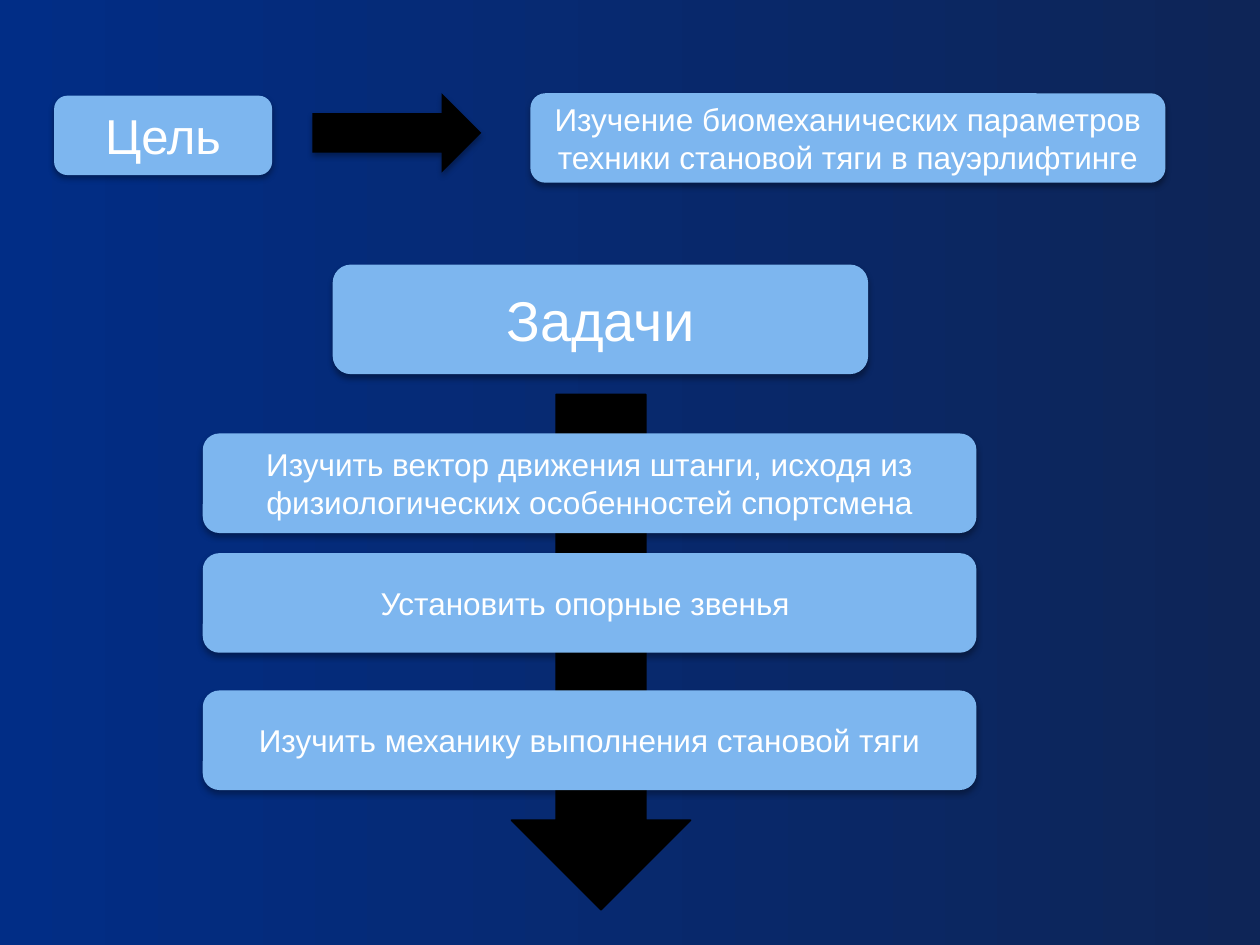
"""Build a slide that leads from the goal of a study to its three tasks."""
from lxml.etree import fromstring
from pptx import Presentation
from pptx.dml.color import RGBColor as Rgb
from pptx.enum.shapes import MSO_SHAPE as Geo
from pptx.enum.text import MSO_ANCHOR as Anchor, PP_ALIGN as Align
from pptx.oxml.ns import qn
from pptx.util import Inches, Pt

THEME = {
    "font": "Arial", "text": "FFFFFF", "box": "7DB6EF", "arrow": "000000",
    "back": ("012D86", "0E2557"), "body": 18, "goal": 28, "head": 32,
}
GOAL = ("Цель", (0.43, 0.76, 1.73, 0.63), "goal")
AIM = ("Изучение биомеханических параметров техники становой тяги в пауэрлифтинге",
       (4.21, 0.74, 5.04, 0.71), "body")
HEAD = ("Задачи", (2.64, 2.1, 4.25, 0.87), "head")
TASKS = [
    ("Изучить вектор движения штанги, исходя из физиологических особенностей спортсмена", 3.44),
    ("Установить опорные звенья ", 4.39),
    ("Изучить механику выполнения становой тяги", 5.48),
]
TASK_LEFT, TASK_WIDE, TASK_HIGH = 1.61, 6.14, 0.79
RIGHT = (2.48, 0.74, 1.34, 0.63)
DOWN = (4.06, 3.13, 1.42, 4.09)
SHADOW = """<a:outerShdw xmlns:a="http://schemas.openxmlformats.org/drawingml/2006/main"
 blurRad="44450" dist="27940" dir="5400000" algn="ctr" rotWithShape="0">
<a:srgbClr val="000000"><a:alpha val="32000"/></a:srgbClr></a:outerShdw>"""


def put(obj, vals):
    for key, val in vals.items():
        setattr(obj, key, val)


def add_shape(slide, geo, place, tint, shade=True):
    shape = slide.shapes.add_shape(geo, *map(Inches, place))
    shape.fill.solid()
    shape.fill.fore_color.rgb = Rgb.from_string(THEME[tint])
    if shade:
        shape.line.fill.background()
    else:
        shape.line.color.rgb = Rgb.from_string(THEME[tint])
        shape.line.width = Pt(1)
    shape.shadow.inherit = False
    if shade:
        shape.element.spPr.find(qn("a:effectLst")).append(fromstring(SHADOW))
    return shape


def add_box(slide, text, place, size):
    frame = add_shape(slide, Geo.ROUNDED_RECTANGLE, place, "box").text_frame
    put(frame, {"word_wrap": True, "vertical_anchor": Anchor.MIDDLE})
    para = frame.paragraphs[0]
    para.alignment = Align.CENTER
    run = para.add_run()
    run.text = text
    put(run.font, {"name": THEME["font"], "size": Pt(THEME[size])})
    run.font.color.rgb = Rgb.from_string(THEME["text"])


def main():
    deck = Presentation()
    put(deck, {"slide_width": Inches(10), "slide_height": Inches(7.5)})
    slide = deck.slides.add_slide(deck.slide_layouts[6])
    fill = slide.background.fill
    fill.gradient()
    fill.gradient_angle = 0
    for stop, tint, spot in zip(fill.gradient_stops, THEME["back"], (0, 1)):
        put(stop, {"position": spot})
        stop.color.rgb = Rgb.from_string(tint)

    add_box(slide, *GOAL)
    add_shape(slide, Geo.RIGHT_ARROW, RIGHT, "arrow")
    add_box(slide, *AIM)
    add_box(slide, *HEAD)
    add_shape(slide, Geo.DOWN_ARROW, DOWN, "arrow", shade=False)
    for text, top in TASKS:
        add_box(slide, text, (TASK_LEFT, top, TASK_WIDE, TASK_HIGH), "body")
    deck.save("out.pptx")


if __name__ == "__main__":
    main()
